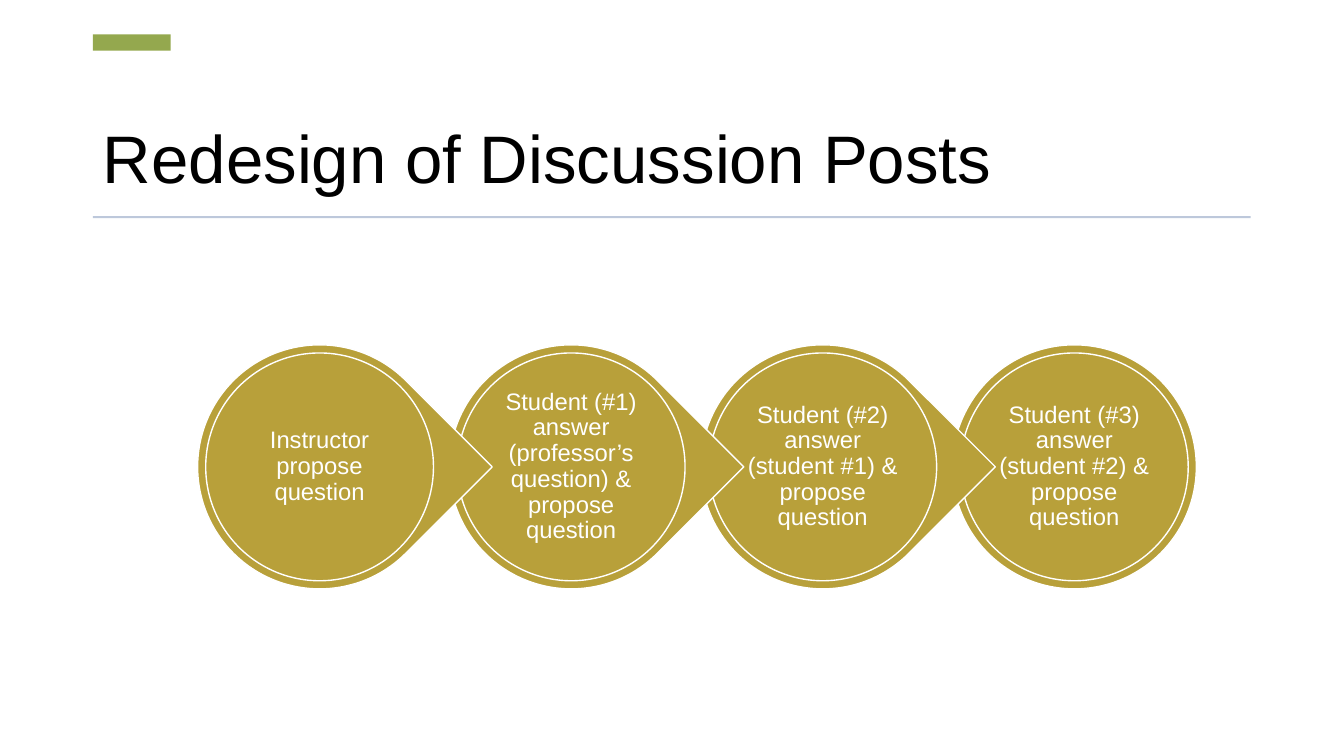
from pptx import Presentation
from pptx.dml.color import RGBColor
from pptx.enum.shapes import MSO_SHAPE
from pptx.enum.text import MSO_ANCHOR, MSO_AUTO_SIZE, PP_ALIGN
from pptx.util import Cm, Pt

COLORS = {"green": "94A84E", "rule": "BDC8DB", "gold": "B8A03A",
          "white": "FFFFFF", "black": "000000"}
FONT = "Arial"


def add_filled(shapes, kind, box, fill, outline=None):
    """Add a shadowless preset shape; box is left, top, width, height in cm."""
    shape = shapes.add_shape(kind, *[Cm(length) for length in box])
    shape.shadow.inherit = False
    shape.fill.solid()
    shape.fill.fore_color.rgb = RGBColor.from_string(COLORS[fill])
    if outline:
        shape.line.color.rgb = RGBColor.from_string(COLORS[outline])
        shape.line.width = Pt(1)
    else:
        shape.line.fill.background()
    return shape


def add_run(paragraph, text, size, color):
    run = paragraph.add_run()
    run.text = text
    run.font.name = FONT
    run.font.size = Pt(size)
    run.font.color.rgb = RGBColor.from_string(COLORS[color])
    paragraph.line_spacing = 0.9


prs = Presentation()
prs.slide_width, prs.slide_height = Cm(33.87), Cm(19.05)
slide = prs.slides.add_slide(prs.slide_layouts[5])

# Title with accent bar and rule
title = slide.shapes.title
title.left, title.top, title.width, title.height = Cm(2.34), Cm(1.9), Cm(29.18), Cm(3.23)
title_frame = title.text_frame
title_frame.auto_size = MSO_AUTO_SIZE.NONE
title_frame.vertical_anchor = MSO_ANCHOR.BOTTOM
heading = title_frame.paragraphs[0]
heading.alignment = PP_ALIGN.LEFT
add_run(heading, "Redesign of Discussion Posts", 48, "black")

add_filled(slide.shapes, MSO_SHAPE.RECTANGLE, (2.34, 0.87, 1.96, 0.41), "green")
add_filled(slide.shapes, MSO_SHAPE.RECTANGLE, (2.34, 5.45, 29.18, 0.05), "rule")

# Chain of discussion steps
steps = [
    "Instructor propose question",
    "Student (#1) answer (professor’s question) & propose question",
    "Student (#2) answer (student #1) & propose question",
    "Student (#3) answer (student #2) & propose question",
]
CHAIN_LEFT, CHAIN_TOP, STEP_PITCH = 4.98, 8.69, 6.34
OUTER, INNER, LABEL = 6.15, 5.74, 4.09
inner_inset, label_inset = (OUTER - INNER) / 2, (OUTER - LABEL) / 2

chain = slide.shapes.add_group_shape().shapes
# The last step goes to the back so that each tip overlaps the next circle
for index, step in reversed(list(enumerate(steps))):
    left = CHAIN_LEFT + index * STEP_PITCH
    is_last = index == len(steps) - 1
    outer_kind = MSO_SHAPE.OVAL if is_last else MSO_SHAPE.TEAR
    outer = add_filled(chain, outer_kind, (left, CHAIN_TOP, OUTER, OUTER), "gold", "white")
    if not is_last:
        outer.adjustments[0] = 1
        outer.rotation = 45
    add_filled(chain, MSO_SHAPE.OVAL,
               (left + inner_inset, CHAIN_TOP + inner_inset, INNER, INNER), "gold", "white")

    label = chain.add_textbox(Cm(left + label_inset), Cm(CHAIN_TOP + label_inset),
                              Cm(LABEL), Cm(LABEL))
    label_frame = label.text_frame
    label_frame.word_wrap = True
    label_frame.vertical_anchor = MSO_ANCHOR.MIDDLE
    label_frame.margin_left = label_frame.margin_right = Cm(0.05)
    label_frame.margin_top = label_frame.margin_bottom = Cm(0.05)
    label_frame.paragraphs[0].alignment = PP_ALIGN.CENTER
    add_run(label_frame.paragraphs[0], step, 17, "white")

prs.save("out.pptx")
